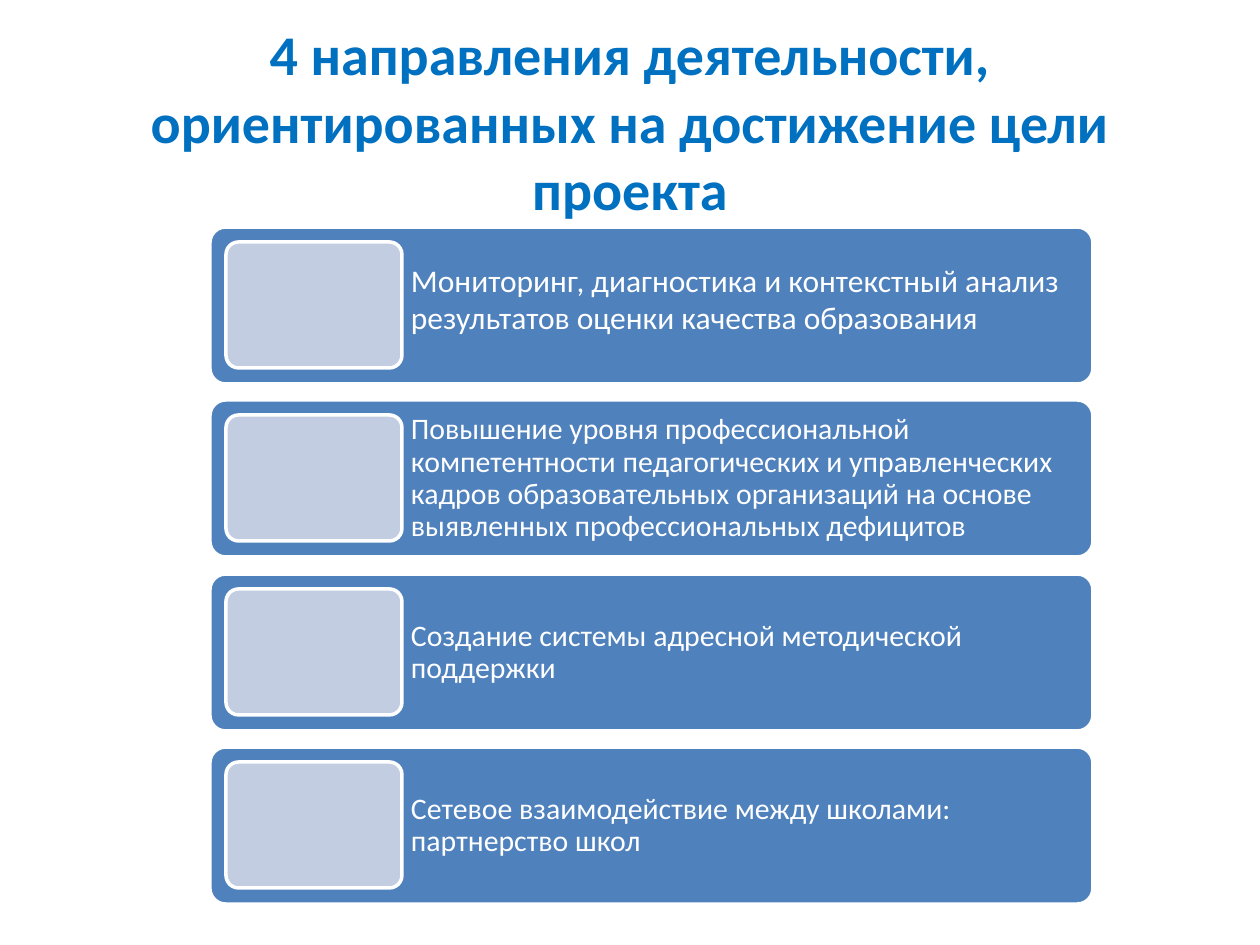
from pptx import Presentation
from pptx.dml.color import RGBColor
from pptx.enum.shapes import MSO_SHAPE as Shape
from pptx.enum.text import MSO_ANCHOR as Anchor, MSO_AUTO_SIZE as AutoSize, PP_ALIGN as Align
from pptx.util import Emu, Pt

WHITE = RGBColor(0xFF, 0xFF, 0xFF)
TITLE_BLUE = RGBColor(0x00, 0x70, 0xC0)
BAR_BLUE = RGBColor(0x4F, 0x81, 0xBD)
PALE_BLUE = RGBColor(0xC2, 0xCD, 0xE1)

PX_PER_INCH = 126
TITLE = "4 направления деятельности, ориентированных на достижение цели проекта"
# wording, size in points, line spacing, bottom inset in px
DIRECTIONS = [
    ("Мониторинг, диагностика и контекстный анализ результатов оценки качества образования",
     18, 1.0, 23),
    ("Повышение уровня профессиональной компетентности педагогических и управленческих "
     "кадров образовательных организаций на основе выявленных профессиональных дефицитов",
     17, 0.9, 9),
    ("Создание системы адресной методической поддержки", 17, 0.9, 9),
    ("Сетевое взаимодействие между школами: партнерство школ", 17, 0.9, 9),
]
FIRST_TOP, BAR_HEIGHT, LIST_SPAN = 227, 157, 520


def px(length):
    return Emu(round(length * 914400 / PX_PER_INCH))


class SlideBuilder:
    """Holds the slide being built and the style shared by its elements."""

    font = "Calibri"
    inset = 9

    def __init__(self, page):
        self.page = page
        self.group = page.shapes.add_group_shape()

    def set_text(self, frame, text, size, color, bold=False, align=Align.LEFT, spacing=1.0):
        frame.word_wrap = True
        frame.auto_size = AutoSize.NONE
        frame.vertical_anchor = Anchor.MIDDLE
        para = frame.paragraphs[0]
        para.alignment = align
        para.line_spacing = spacing
        span = para.add_run()
        span.text = text
        span.font.name = self.font
        span.font.size = Pt(size)
        span.font.bold = bold
        span.font.color.rgb = color

    def title(self, text, left, top, width, height, bottom_inset):
        box = self.page.shapes.title
        box.left, box.top, box.width, box.height = map(px, (left, top, width, height))
        box.text_frame.margin_bottom = px(bottom_inset)
        self.set_text(box.text_frame, text, 32, TITLE_BLUE, bold=True, align=Align.CENTER)

    def panel(self, left, top, width, height, fill):
        shape = self.group.shapes.add_shape(
            Shape.ROUNDED_RECTANGLE, *map(px, (left, top, width, height)))
        shape.adjustments[0] = 0.1
        shape.shadow.inherit = False
        shape.fill.solid()
        shape.fill.fore_color.rgb = fill
        shape.line.color.rgb = WHITE
        shape.line.width = Pt(2)

    def label(self, text, left, top, width, height, size, spacing, bottom_inset):
        box = self.group.shapes.add_textbox(*map(px, (left, top, width, height)))
        frame = box.text_frame
        frame.margin_left = frame.margin_right = frame.margin_top = px(self.inset)
        frame.margin_bottom = px(bottom_inset)
        self.set_text(frame, text, size, WHITE, spacing=spacing)


def main():
    deck = Presentation()
    deck.slide_width, deck.slide_height = px(1260), px(945)
    builder = SlideBuilder(deck.slides.add_slide(deck.slide_layouts[5]))
    builder.title(TITLE, 63, 38, 1134, 228, bottom_inset=69)

    last = len(DIRECTIONS) - 1
    for index, (text, size, spacing, bottom_inset) in enumerate(DIRECTIONS):
        top = FIRST_TOP + round(LIST_SPAN * index / last)
        builder.panel(210, top, 883, BAR_HEIGHT, BAR_BLUE)
        builder.label(text, 402, top, 690, BAR_HEIGHT, size, spacing, bottom_inset)
        builder.panel(226, top + 15, 176, 126, PALE_BLUE)

    deck.save("out.pptx")


if __name__ == "__main__":
    main()
